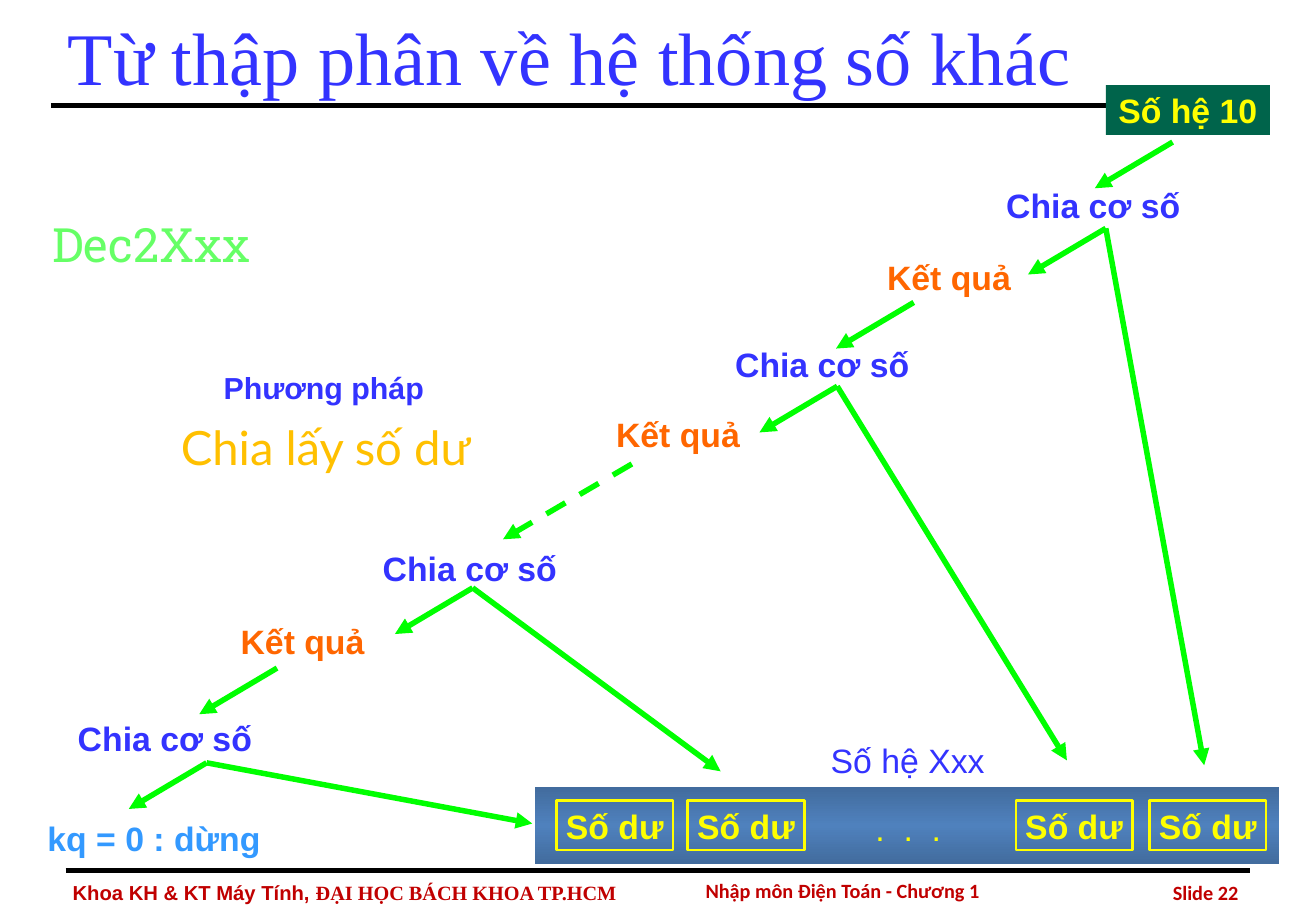
import copy
from dataclasses import dataclass

import pptx
import pptx.dml.color
import pptx.enum.dml
import pptx.enum.shapes
import pptx.enum.text
import pptx.oxml.ns
import pptx.util
from lxml import etree

ALIGN = pptx.enum.text.PP_ALIGN
ANCHOR = pptx.enum.text.MSO_ANCHOR


@dataclass(frozen=True)
class Theme:
    blue: str = "3333FF"
    sky: str = "3399FF"
    orange: str = "FF6600"
    amber: str = "FFC000"
    yellow: str = "FFFF00"
    mint: str = "66FF66"
    arrow: str = "00FF00"
    pine: str = "00644B"
    red: str = "C00000"
    black: str = "000000"
    bar_edge: str = "426C9E"
    bar_middle: str = "4F81BD"
    sans: str = "Arial"
    serif: str = "Times New Roman"
    title_size: int = 44
    accent_size: int = 28
    label_size: int = 20
    caption_size: int = 18
    footer_size: int = 12
    arrow_width: float = 3.25
    rule_width: float = 3
    frame_width: float = 1.5
    inset: int = 4


THEME = Theme()
SLIDE_WIDTH, SLIDE_HEIGHT = 10.83, 7.5
COLUMNS, ROWS = 1083, 750
ROW_HEIGHT = 41

TITLE = "Từ thập phân về hệ thống số khác"
FOOTER = [("Khoa KH & KT Máy Tính, ", THEME.sans), ("ĐẠI HỌC BÁCH KHOA TP.HCM", THEME.serif)]
COURSE = "Nhập môn Điện Toán - Chương 1"
PAGE = "Slide 22"
DIVIDE, RESULT, REMAINDER = "Chia cơ số", "Kết quả", "Số dư"

RULES = [(42, 87), (54, 717)]
RULE_LENGTH = 975
DIVISIONS = [
    {"box": (824, 148), "apex": (910, 188), "remainder": (991, 630)},
    {"box": (601, 279), "apex": (689, 318), "remainder": (878, 626)},
    {"box": (311, 447), "apex": (389, 484), "remainder": (593, 635)},
    {"box": (60, 587), "apex": (170, 628), "remainder": (438, 678)},
]
RESULTS = [(726, 207), (503, 337), (194, 507)]
FEEDS = [(965, 117), (752, 249), (228, 550)]
STEP = (-64, 38)
DASHED = ((520, 382), (414, 444))
BAR = (440, 648, 613, 63)
REMAINDER_LEFTS = [458, 566, 836, 946]

presentation = pptx.Presentation()
presentation.slide_width = pptx.util.Inches(SLIDE_WIDTH)
presentation.slide_height = pptx.util.Inches(SLIDE_HEIGHT)
slide = presentation.slides.add_slide(presentation.slide_layouts[6])


def across(columns):
    return round(presentation.slide_width * columns / COLUMNS)


def down(rows):
    return round(presentation.slide_height * rows / ROWS)


def place(box):
    left, top, width, height = box
    return across(left), down(top), across(width), down(height)


def colour(value):
    return pptx.dml.color.RGBColor.from_string(value)


def add_box(box, fill=None, line=None):
    shape = slide.shapes.add_shape(pptx.enum.shapes.MSO_SHAPE.RECTANGLE, *place(box))
    shape.shadow.inherit = False
    if fill:
        shape.fill.solid()
        shape.fill.fore_color.rgb = colour(fill)
    else:
        shape.fill.background()
    if line:
        shape.line.color.rgb = colour(line)
        shape.line.width = pptx.util.Pt(THEME.frame_width)
    else:
        shape.line.fill.background()
    return shape


def add_text(text, box=None, shape=None, size=THEME.label_size, color=THEME.blue, font=THEME.sans,
             bold=True, align=ALIGN.LEFT, anchor=ANCHOR.TOP, inset=THEME.inset, spacing=0):
    shape = shape or slide.shapes.add_textbox(*place(box))
    frame = shape.text_frame
    frame.word_wrap = True
    frame.vertical_anchor = anchor
    frame.margin_left = frame.margin_right = across(inset)
    frame.margin_top = frame.margin_bottom = down(min(inset, 5))
    paragraph = frame.paragraphs[0]
    paragraph.alignment = align
    for words, family in [(text, font)] if isinstance(text, str) else text:
        run = paragraph.add_run()
        run.text = words
        run.font.name = family
        run.font.size = pptx.util.Pt(size)
        run.font.bold = bold
        run.font.color.rgb = colour(color)
        if spacing:
            run.font._element.set("spc", str(spacing))


def add_line(start, end, color=THEME.arrow, width=THEME.arrow_width, arrow=True, dashed=False):
    connector = slide.shapes.add_connector(
        pptx.enum.shapes.MSO_CONNECTOR.STRAIGHT,
        across(start[0]), down(start[1]), across(end[0]), down(end[1]))
    connector.line.color.rgb = colour(color)
    connector.line.width = pptx.util.Pt(width)
    if dashed:
        connector.line.dash_style = pptx.enum.dml.MSO_LINE.DASH
    properties = connector._element.spPr
    if arrow:
        outline = properties.find(pptx.oxml.ns.qn("a:ln"))
        etree.SubElement(outline, pptx.oxml.ns.qn("a:tailEnd"), type="triangle")
    etree.SubElement(properties, pptx.oxml.ns.qn("a:effectLst"))


def add_step(start):
    add_line(start, (start[0] + STEP[0], start[1] + STEP[1]))


def add_bar():
    bar = add_box(BAR)
    bar.fill.gradient()
    bar.fill.gradient_angle = 90
    first, last = bar.fill.gradient_stops
    first.position, last.position = 0, 1
    first.color.rgb = colour(THEME.bar_middle)
    last.color.rgb = colour(THEME.bar_edge)
    middle = copy.deepcopy(first._gs)
    middle.set("pos", "50000")
    first._gs.addnext(middle)
    first.color.rgb = colour(THEME.bar_edge)


for left, top in RULES:
    add_line((left, top), (left + RULE_LENGTH, top), color=THEME.black,
             width=THEME.rule_width, arrow=False)

footer = {"size": THEME.footer_size, "color": THEME.red, "anchor": ANCHOR.MIDDLE, "inset": 10}
add_text(TITLE, (46, 0, 970, 92), size=THEME.title_size, font=THEME.serif, bold=False,
         anchor=ANCHOR.MIDDLE, inset=10)
add_text(FOOTER, (50, 720, 557, 30), **footer)
add_text(COURSE, (522, 716, 343, 34), font="Calibri", align=ALIGN.CENTER, **footer)
add_text(PAGE, (889, 719, 140, 31), font="Calibri", align=ALIGN.RIGHT, **footer)

add_text("Phương pháp", (180, 300, 192, ROW_HEIGHT), size=THEME.caption_size)
add_text("Chia lấy số dư", (106, 340, 324, 55), size=THEME.accent_size, color=THEME.amber,
         font="Lato", bold=False, align=ALIGN.CENTER)
add_text("Dec2Xxx", (43, 177, 220, 47), size=THEME.accent_size, color=THEME.mint,
         font="Roboto Slab", bold=False, inset=0)

add_text("Số hệ 10", shape=add_box((910, 70, 135, ROW_HEIGHT), fill=THEME.pine),
         color=THEME.yellow, align=ALIGN.CENTER)
for division in DIVISIONS:
    add_text(DIVIDE, (*division["box"], 157, ROW_HEIGHT))
    add_line(division["apex"], division["remainder"])
    add_step(division["apex"])
for corner in RESULTS:
    add_text(RESULT, (*corner, 117, ROW_HEIGHT), color=THEME.orange)
for start in FEEDS:
    add_step(start)
add_line(*DASHED, dashed=True)
add_text("kq = 0 : dừng", (35, 669, 201, 47), color=THEME.sky)

add_bar()
for left in REMAINDER_LEFTS:
    add_text(REMAINDER, shape=add_box((left, 659, 96, ROW_HEIGHT), line=THEME.yellow),
             color=THEME.yellow, align=ALIGN.CENTER)
add_text(". . .", (684, 661, 127, 35), color=THEME.yellow, bold=False,
         align=ALIGN.CENTER, spacing=280)
add_text("Số hệ Xxx", (671, 605, 152, ROW_HEIGHT), bold=False, align=ALIGN.CENTER)

presentation.save("out.pptx")
